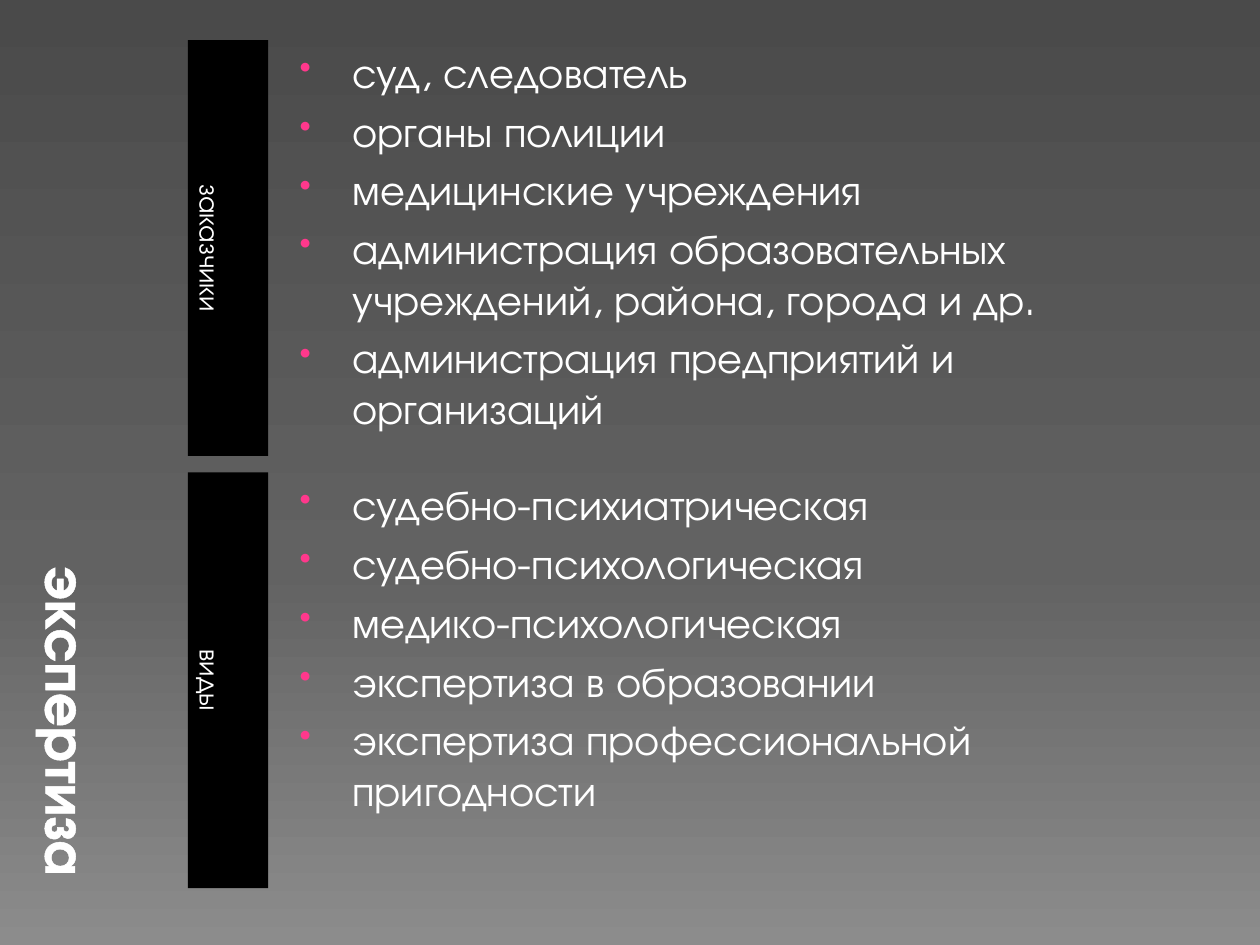
from dataclasses import dataclass

from lxml import etree
from pptx import Presentation, util as u
from pptx.dml.color import RGBColor
from pptx.enum import shapes, text
from pptx.oxml import parse_xml
from pptx.oxml.ns import nsdecls, qn

Pt = u.Pt


@dataclass(frozen=True)
class Theme:
    font: str = "TeX Gyre Adventor"
    ink: str = "FFFFFF"
    panel: str = "000000"
    accent: str = "FF388C"
    backdrop: tuple = ((0, "4A4A4A"), (60, "626262"), (100, "8C8C8C"))
    title_size: int = 33
    label_size: int = 16
    body_size: int = 24


THEME = Theme()

# Two equal rows: a label on the left, its list on the right
TOP, ROW_HEIGHT, ROW_STEP = 23, 237.6, 247
LABEL_LEFT, LABEL_WIDTH = 107.3, 46
LIST_LEFT, LIST_WIDTH = 159.1, 540
TITLE_LEFT, TITLE_WIDTH = 19.4, 84.2
TITLE_LENGTH = ROW_STEP + ROW_HEIGHT

SECTIONS = [
    ("заказчики", [
        "суд, следователь",
        "органы полиции",
        "медицинские учреждения",
        "администрация образовательных учреждений, района, города и др.",
        "администрация предприятий и организаций",
    ]),
    ("виды", [
        "судебно-психиатрическая",
        "судебно-психологическая",
        "медико-психологическая",
        "экспертиза в образовании",
        "экспертиза профессиональной пригодности",
    ]),
]


def paint_background(page):
    stops = "".join(
        f'<a:gs pos="{place * 1000}"><a:srgbClr val="{color}"/></a:gs>'
        for place, color in THEME.backdrop)
    page.element.cSld.insert(0, parse_xml(
        f'<p:bg {nsdecls("p", "a")}><p:bgPr><a:gradFill rotWithShape="1">'
        f'<a:gsLst>{stops}</a:gsLst><a:lin ang="5400000" scaled="0"/>'
        '</a:gradFill><a:effectLst/></p:bgPr></p:bg>'))


def add_span(para, words, size, bold=False):
    span = para.add_run()
    span.text = words
    span.font.name = THEME.font
    span.font.size = Pt(size)
    span.font.bold = bold
    span.font.color.rgb = RGBColor.from_string(THEME.ink)
    return span


def set_frame(frame):
    frame.word_wrap = True
    frame.auto_size = text.MSO_AUTO_SIZE.NONE
    frame.vertical_anchor = text.MSO_ANCHOR.BOTTOM


def set_title(page, words):
    # A flat box turned a quarter clockwise about the centre of its column
    box = page.shapes.title
    box.left = Pt(TITLE_LEFT + (TITLE_WIDTH - TITLE_LENGTH) / 2)
    box.top = Pt(TOP + (TITLE_LENGTH - TITLE_WIDTH) / 2)
    box.width, box.height = Pt(TITLE_LENGTH), Pt(TITLE_WIDTH)
    box.rotation = 90
    set_frame(box.text_frame)
    box.text_frame.margin_bottom = 0
    para = box.text_frame.paragraphs[0]
    para.alignment = text.PP_ALIGN.RIGHT
    span = add_span(para, words, THEME.title_size, bold=True)
    # Thin outline around the letters
    span.font._element.insert(0, parse_xml(
        f'<a:ln {nsdecls("a")} w="6350"><a:solidFill>'
        f'<a:srgbClr val="{THEME.ink}"/></a:solidFill></a:ln>'))


def add_label(page, words, top):
    box = page.shapes.add_shape(
        shapes.MSO_SHAPE.RECTANGLE,
        Pt(LABEL_LEFT), Pt(top), Pt(LABEL_WIDTH), Pt(ROW_HEIGHT))
    box.shadow.inherit = False
    box.fill.solid()
    box.fill.fore_color.rgb = RGBColor.from_string(THEME.panel)
    box.line.fill.background()
    set_frame(box.text_frame)
    box.text_frame._txBody.bodyPr.set("vert", "vert")
    para = box.text_frame.paragraphs[0]
    para.alignment = text.PP_ALIGN.CENTER
    add_span(para, words, THEME.label_size)


def add_bullet(para):
    props = para._p.get_or_add_pPr()
    props.set("marL", str(Pt(35.3)))
    props.set("indent", str(Pt(-30.2)))
    color = etree.SubElement(props, qn("a:buClr"))
    etree.SubElement(color, qn("a:srgbClr"), val=THEME.accent)
    etree.SubElement(props, qn("a:buSzPct"), val="80000")
    etree.SubElement(props, qn("a:buChar"), char="•")


def add_list(page, items, top):
    box = page.shapes.add_textbox(
        Pt(LIST_LEFT), Pt(top), Pt(LIST_WIDTH), Pt(ROW_HEIGHT))
    frame = box.text_frame
    frame.word_wrap = True
    for index, item in enumerate(items):
        para = frame.add_paragraph() if index else frame.paragraphs[0]
        para.space_before = Pt(0.2 * THEME.body_size)
        add_bullet(para)
        add_span(para, item, THEME.body_size)


def main():
    deck = Presentation()
    deck.slide_width, deck.slide_height = Pt(720), Pt(540)
    page = deck.slides.add_slide(deck.slide_layouts.get_by_name("Title Only"))
    paint_background(page)
    set_title(page, "экспертиза")

    # Labelled lists
    for row, (label, items) in enumerate(SECTIONS):
        top = TOP + row * ROW_STEP
        add_label(page, label, top)
        add_list(page, items, top)

    deck.save("out.pptx")


if __name__ == "__main__":
    main()
